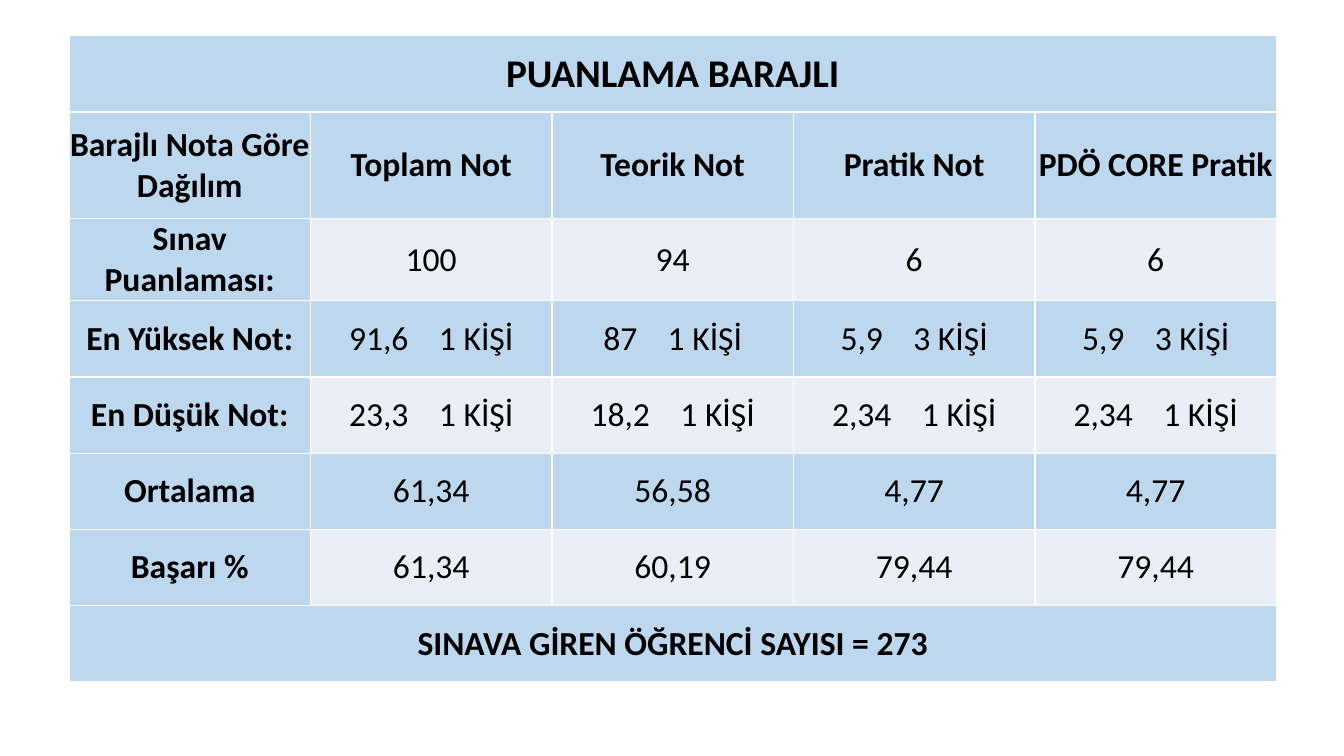
from lxml.etree import SubElement
from pptx import Presentation
from pptx.dml.color import RGBColor
from pptx.enum.text import MSO_ANCHOR as Anchor, PP_ALIGN as Align
from pptx.oxml.ns import qn
from pptx.util import Pt

COLORS = {"text": "000000", "blue": "BDD7EE", "pale": "EAEFF7", "border": "FFFFFF"}
FONT = "Calibri"
COL_WIDTH, ROW_HEIGHT, HEADER_HEIGHT = 172.5, 54.43, 76.3
GAP = 16.3  # extra width between a grade and its head count

TITLE = "PUANLAMA BARAJLI"
FOOTER = "SINAVA GİREN ÖĞRENCİ SAYISI = 273"
HEADER = ["Barajlı Nota Göre Dağılım", "Toplam Not", "Teorik Not",
          "Pratik Not", "PDÖ CORE Pratik"]
# A tuple holds a grade and the number of students who got it
GRADES = [
    ["Sınav Puanlaması:", "100", "94", "6", "6"],
    ["En Yüksek Not:", ("91,6", "1 KİŞİ"), ("87", "1 KİŞİ"),
     ("5,9", "3 KİŞİ"), ("5,9", "3 KİŞİ")],
    ["En Düşük Not:", ("23,3", "1 KİŞİ"), ("18,2", "1 KİŞİ"),
     ("2,34", "1 KİŞİ"), ("2,34", "1 KİŞİ")],
    ["Ortalama", "61,34", "56,58", "4,77", "4,77"],
    ["Başarı %", "61,34", "60,19", "79,44", "79,44"],
]


def add_run(p, text, size, bold):
    r = p.add_run()
    r.text = text
    r.font.name, r.font.size, r.font.bold = FONT, Pt(size), bold
    r.font.color.rgb = RGBColor.from_string(COLORS["text"])
    return r


def set_borders(cell):
    tc_pr = cell._tc.get_or_add_tcPr()
    for side in ("a:lnL", "a:lnR", "a:lnT", "a:lnB"):
        ln = SubElement(tc_pr, qn(side), w=str(Pt(1)))
        fill = SubElement(ln, qn("a:solidFill"))
        SubElement(fill, qn("a:srgbClr"), val=COLORS["border"])


def style_cell(cell, color):
    set_borders(cell)
    cell.fill.solid()
    cell.fill.fore_color.rgb = RGBColor.from_string(COLORS[color])
    cell.margin_left = cell.margin_right = cell.margin_top = cell.margin_bottom = 0
    cell.vertical_anchor = Anchor.MIDDLE


def write_cell(cell, content, size=24, bold=False):
    p = cell.text_frame.paragraphs[0]
    p.alignment = Align.CENTER
    if isinstance(content, str):
        add_run(p, content, size, bold)
        return
    grade, students = content
    add_run(p, grade, size, bold)
    space = add_run(p, " ", size, bold)
    space.font._element.set("spc", str(round(GAP * 100)))
    add_run(p, students, size, bold)


def write_banner(table, row, text, size):
    first, last = table.cell(row, 0), table.cell(row, len(HEADER) - 1)
    first.merge(last)
    write_cell(first, text, size, bold=True)


def add_grade_table(s):
    rows = [HEADER] + GRADES
    n_rows, n_cols = len(rows) + 2, len(HEADER)
    height = (n_rows - 1) * ROW_HEIGHT + HEADER_HEIGHT
    table = s.shapes.add_table(n_rows, n_cols, Pt(49.3), Pt(25.5),
                               Pt(n_cols * COL_WIDTH), Pt(height)).table
    for col in table.columns:
        col.width = Pt(COL_WIDTH)
    for i, row in enumerate(table.rows):
        row.height = Pt(HEADER_HEIGHT if i == 1 else ROW_HEIGHT)

    # Fills: pale values on every other grade row, blue elsewhere
    for i in range(n_rows):
        for j in range(n_cols):
            pale = j > 0 and i in range(2, n_rows - 1, 2)
            style_cell(table.cell(i, j), "pale" if pale else "blue")

    # Texts
    write_banner(table, 0, TITLE, 28)
    for i, row in enumerate(rows, 1):
        for j, content in enumerate(row):
            write_cell(table.cell(i, j), content, bold=i == 1 or j == 0)
    write_banner(table, n_rows - 1, FOOTER, 24)


def main():
    prs = Presentation()
    prs.slide_width, prs.slide_height = Pt(960), Pt(540)
    s = prs.slides.add_slide(prs.slide_layouts[6])
    add_grade_table(s)
    prs.save("out.pptx")


if __name__ == "__main__":
    main()
